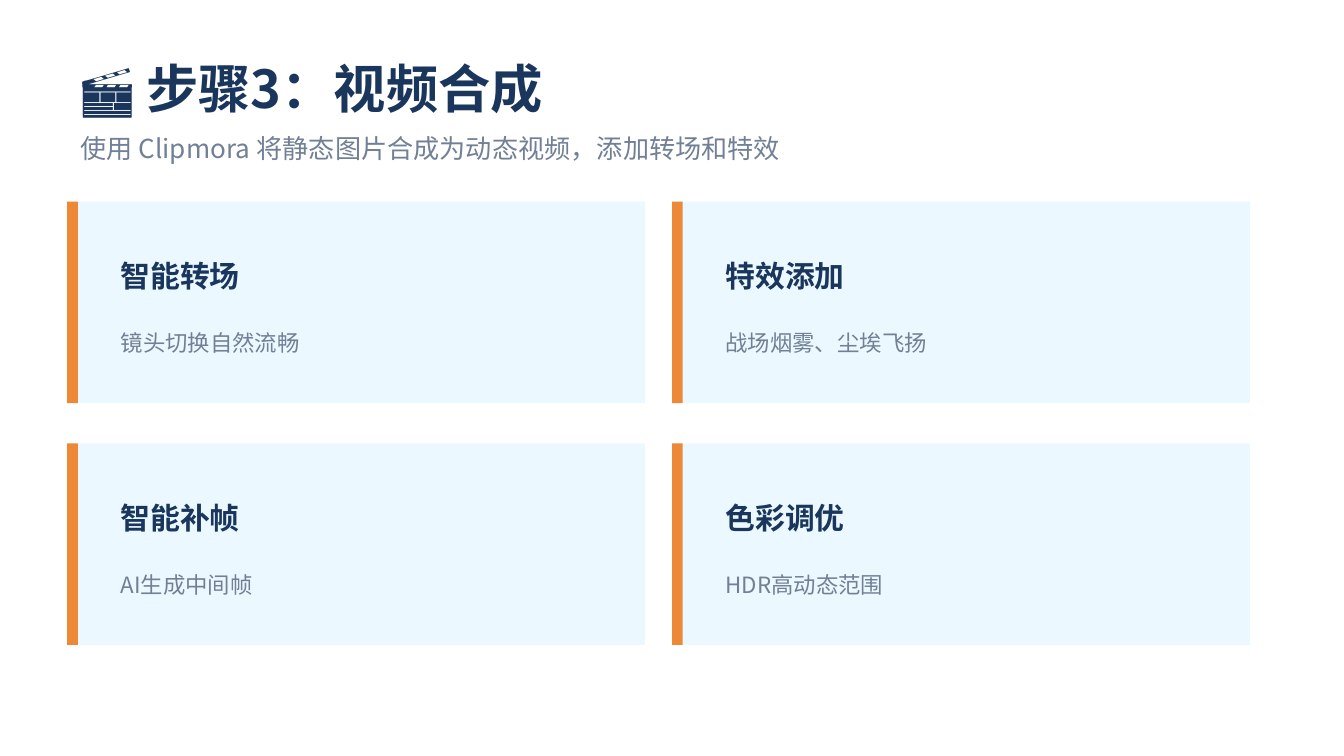
from lxml import etree
from pptx import Presentation
from pptx.dml.color import RGBColor
from pptx.enum.shapes import MSO_SHAPE
from pptx.enum.text import MSO_ANCHOR, MSO_AUTO_SIZE, PP_ALIGN
from pptx.oxml.ns import qn
from pptx.util import Emu, Pt

RECTANGLE = MSO_SHAPE.RECTANGLE
MIDDLE = MSO_ANCHOR.MIDDLE
NO_AUTOFIT = MSO_AUTO_SIZE.NONE
LEFT = PP_ALIGN.LEFT

NAVY = RGBColor(0x1A, 0x36, 0x5D)
GRAY = RGBColor(0x71, 0x80, 0x96)
PALE_BLUE = RGBColor(0xEB, 0xF8, 0xFF)
ORANGE = RGBColor(0xED, 0x89, 0x36)
WHITE = RGBColor(0xFF, 0xFF, 0xFF)

FONT = "Noto Sans CJK SC"
EMU_PER_PX = 4572
SLIDE_WIDTH, SLIDE_HEIGHT = 2000, 1125
TITLE_ONLY = 5

TITLE = {"size": Pt(28), "bold": True}
SUBTITLE = {"size": Pt(14), "bold": False}
CARD_TITLE = {"size": Pt(16), "bold": True}
CARD_BODY = {"size": Pt(12), "bold": False}

CARD_WIDTH, CARD_HEIGHT = 860, 300
COLUMN_STEP, ROW_STEP = 900, 360
COLUMNS = 2
CARDS = [
    ("智能转场", "镜头切换自然流畅"),
    ("特效添加", "战场烟雾、尘埃飞扬"),
    ("智能补帧", "AI生成中间帧"),
    ("色彩调优", "HDR高动态范围"),
]


def px(value):
    return Emu(value * EMU_PER_PX)


def write_text(shape, text, style, color):
    frame = shape.text_frame
    frame_format = {"word_wrap": True, "auto_size": NO_AUTOFIT, "vertical_anchor": MIDDLE}
    for name, value in frame_format.items():
        setattr(frame, name, value)
    paragraph = frame.paragraphs[0]
    paragraph.alignment = LEFT
    run = paragraph.add_run()
    run.text = text
    for name, value in {**style, "name": FONT}.items():
        setattr(run.font, name, value)
    run.font.color.rgb = color
    properties = run.font._element
    etree.SubElement(properties, qn("a:ea")).set("typeface", FONT)


def add_text(slide, left, top, width, height, text, style, color):
    shape = slide.shapes.add_textbox(px(left), px(top), px(width), px(height))
    write_text(shape, text, style, color)


def add_rectangle(slide, left, top, width, height, color):
    shape = slide.shapes.add_shape(RECTANGLE, px(left), px(top), px(width), px(height))
    shape.shadow.inherit = False
    shape.fill.solid()
    shape.fill.fore_color.rgb = color
    shape.line.fill.background()


def add_header(slide, left, top, width):
    title = slide.shapes.title
    box = {"left": left, "top": top, "width": width, "height": 140}
    for name, value in box.items():
        setattr(title, name, px(value))
    write_text(title, "🎬 步骤3：视频合成", TITLE, NAVY)
    add_text(slide, left, top + 120, width, 80,
             "使用 Clipmora 将静态图片合成为动态视频，添加转场和特效", SUBTITLE, GRAY)


def add_card(slide, left, top, width, height, heading, body):
    add_rectangle(slide, left, top, width, height, PALE_BLUE)
    add_rectangle(slide, left, top, 16, height, ORANGE)
    add_text(slide, left + 60, top + 60, width - 100, 100, heading, CARD_TITLE, NAVY)
    add_text(slide, left + 60, top + 160, width - 100, 100, body, CARD_BODY, GRAY)


def add_card_grid(slide, left, top):
    for index, (heading, body) in enumerate(CARDS):
        row, column = divmod(index, COLUMNS)
        add_card(slide, left + column * COLUMN_STEP, top + row * ROW_STEP,
                 CARD_WIDTH, CARD_HEIGHT, heading, body)


def main():
    presentation = Presentation()
    presentation.slide_width = px(SLIDE_WIDTH)
    presentation.slide_height = px(SLIDE_HEIGHT)
    slide = presentation.slides.add_slide(presentation.slide_layouts[TITLE_ONLY])
    slide.background.fill.solid()
    slide.background.fill.fore_color.rgb = WHITE
    add_header(slide, 100, 60, 1800)
    add_card_grid(slide, 100, 300)
    presentation.save("out.pptx")


if __name__ == "__main__":
    main()
